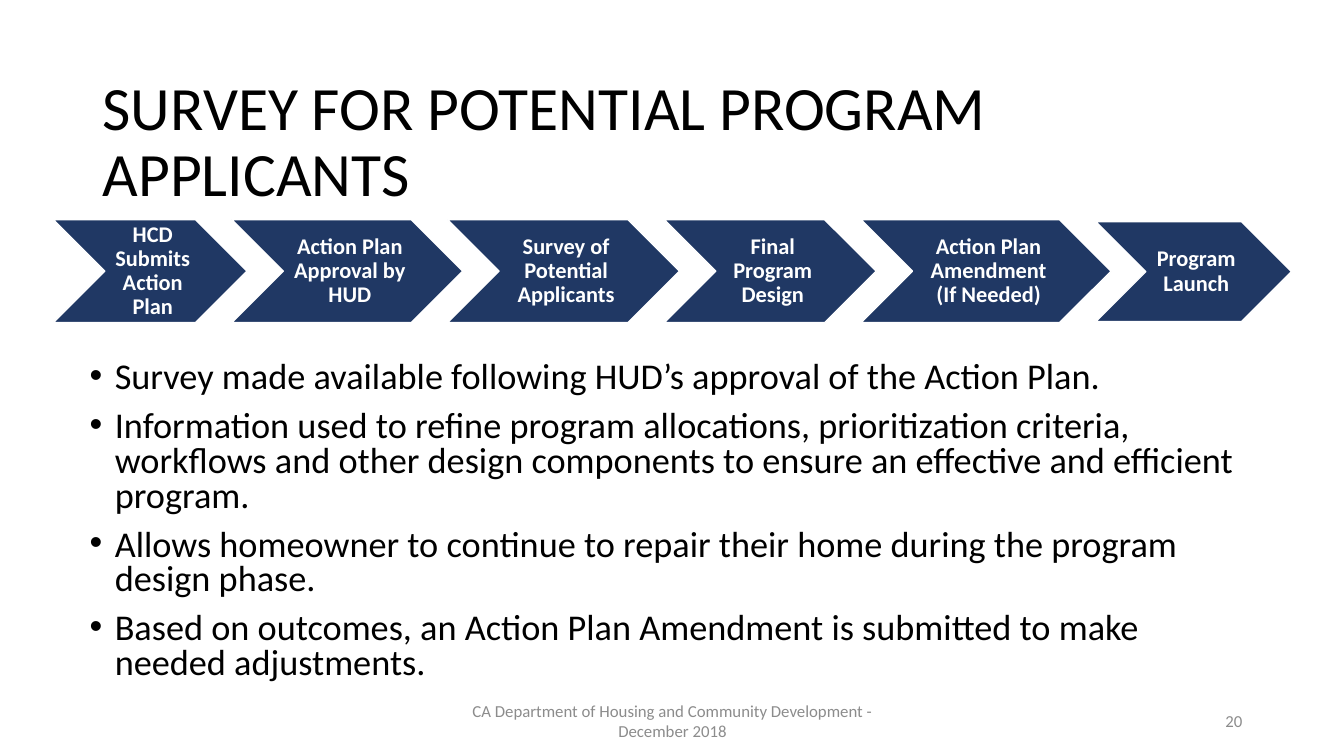
import pptx
import pptx.dml.color
import pptx.enum.shapes
import pptx.enum.text
import pptx.oxml
import pptx.oxml.ns
import pptx.util

PX = 9144
FONT = "Calibri"
BLACK = pptx.dml.color.RGBColor(0x00, 0x00, 0x00)
WHITE = pptx.dml.color.RGBColor(0xFF, 0xFF, 0xFF)
NAVY = pptx.dml.color.RGBColor(0x20, 0x38, 0x64)
GRAY = pptx.dml.color.RGBColor(0x8C, 0x8C, 0x8C)
ALIGN = pptx.enum.text.PP_ALIGN
MIDDLE = pptx.enum.text.MSO_ANCHOR.MIDDLE

STEP_LEFT = 53
STEP_MIDDLE = 269
STEP_OVERLAP = 15
STEPS = [
    ("HCD Submits Action Plan", 192, 102),
    ("Action Plan Approval by HUD", 229, 102),
    ("Survey of Potential Applicants", 230, 102),
    ("Final Program Design", 210, 102),
    ("Action Plan Amendment\v(If Needed)", 248, 102),
    ("Program Launch", 194, 99),
]
BULLETS = [
    "Survey made available following HUD’s approval of the Action Plan.",
    "Information used to refine program allocations, prioritization criteria, "
    "workflows and other design components to ensure an effective and efficient program.",
    "Allows homeowner to continue to repair their home during the program design phase.",
    "Based on outcomes, an Action Plan Amendment is submitted to make needed adjustments.",
]


def px(*lengths):
    return [pptx.util.Emu(length * PX) for length in lengths]


def style_paragraph(p, size, color, align=ALIGN.LEFT, bold=False, spacing=1.0):
    p.alignment = align
    p.line_spacing = spacing
    for r in p.runs:
        r.font.name = FONT
        r.font.size = pptx.util.Pt(size)
        r.font.bold = bold
        r.font.color.rgb = color


def add_text(slide, box, text, size, color, align=ALIGN.LEFT, spacing=1.0):
    tf = slide.shapes.add_textbox(*px(*box)).text_frame
    tf.word_wrap = True
    tf.vertical_anchor = MIDDLE
    tf.text = text
    style_paragraph(tf.paragraphs[0], size, color, align, spacing=spacing)


def add_bullets(slide, box, items):
    tf = slide.shapes.add_textbox(*px(*box)).text_frame
    tf.word_wrap = True
    tf.text = "\n".join(items)
    for p in tf.paragraphs:
        style_paragraph(p, 25.9, BLACK, spacing=0.8)
        p.space_before = pptx.util.Pt(10)
        pPr = p._p.get_or_add_pPr()
        indent = pptx.util.Inches(0.25)
        pPr.set("marL", str(indent))
        pPr.set("indent", str(-indent))
        ns = pptx.oxml.ns.nsdecls("a")
        pPr.append(pptx.oxml.parse_xml(f'<a:buFont {ns} typeface="Arial"/>'))
        pPr.append(pptx.oxml.parse_xml(f'<a:buChar {ns} char="•"/>'))


def add_step(slide, left, width, height, text):
    box = px(left, STEP_MIDDLE - height // 2, width, height)
    sp = slide.shapes.add_shape(pptx.enum.shapes.MSO_SHAPE.CHEVRON, *box)
    sp.shadow.inherit = False
    sp.fill.solid()
    sp.fill.fore_color.rgb = NAVY
    sp.line.color.rgb = WHITE
    sp.line.width = pptx.util.Pt(1)
    tf = sp.text_frame
    tf.word_wrap = True
    tf.vertical_anchor = MIDDLE
    tf.margin_left, tf.margin_top, tf.margin_right, tf.margin_bottom = px(7, 2, 2, 2)
    tf.text = text
    style_paragraph(tf.paragraphs[0], 16, WHITE, ALIGN.CENTER, True, 0.9)


def add_process(slide):
    left = STEP_LEFT
    for text, width, height in STEPS:
        add_step(slide, left, width, height, text)
        left += width - STEP_OVERLAP


def main():
    prs = pptx.Presentation()
    prs.slide_width, prs.slide_height = px(1333, 750)
    slide = prs.slides.add_slide(prs.slide_layouts[6])
    add_text(slide, (92, 70, 1150, 145), "SURVEY FOR POTENTIAL PROGRAM APPLICANTS",
             44, BLACK, spacing=0.9)
    add_bullets(slide, (79, 354, 1175, 346), BULLETS)
    add_process(slide)
    add_text(slide, (442, 695, 450, 40),
             "CA Department of Housing and Community Development - December 2018",
             12, GRAY, ALIGN.CENTER)
    add_text(slide, (942, 695, 300, 40), "20", 12, GRAY, ALIGN.RIGHT)
    prs.save("out.pptx")


if __name__ == "__main__":
    main()
